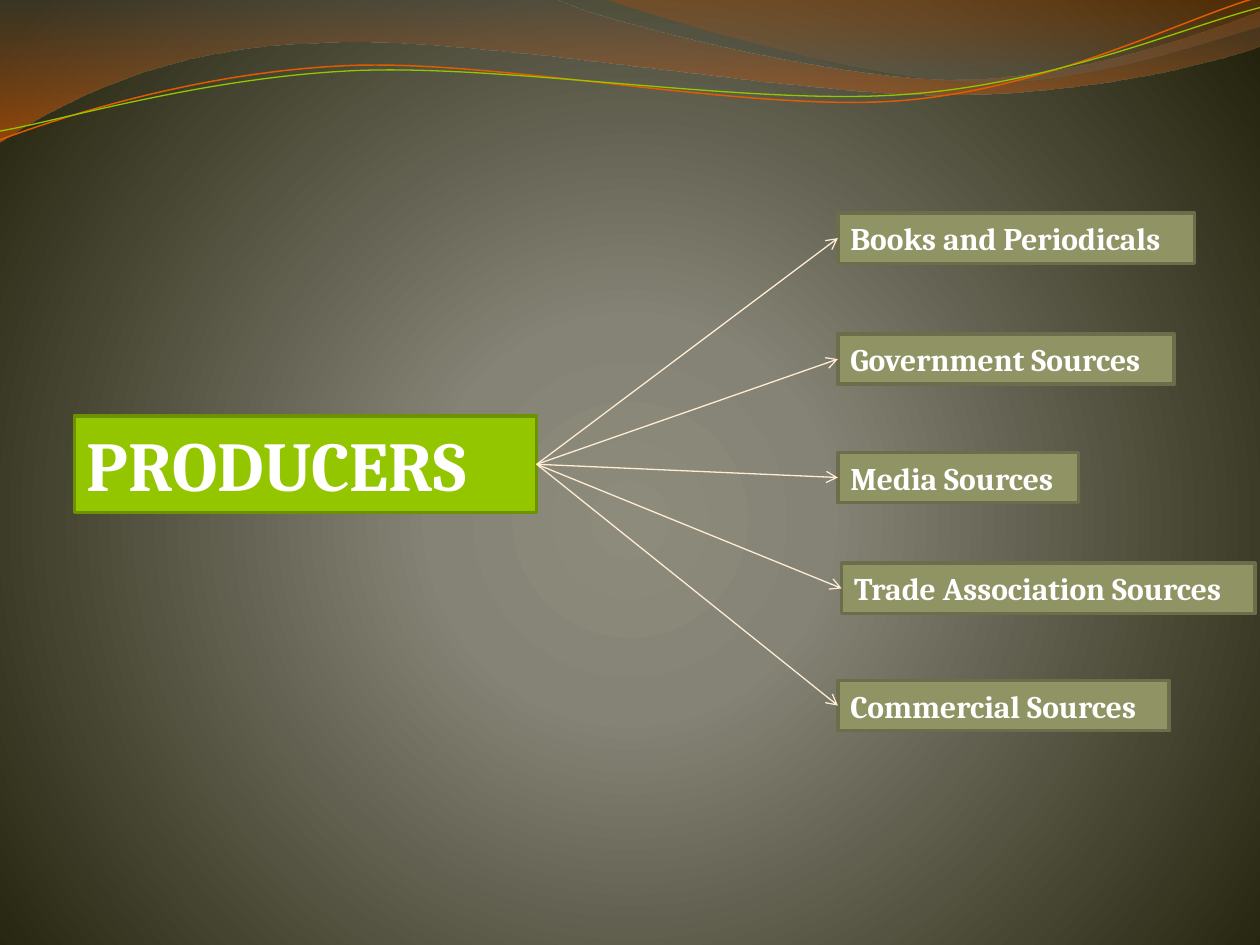
from math import cos, radians, sin

from lxml import etree
from pptx import Presentation
from pptx.dml.color import RGBColor
from pptx.enum.shapes import MSO_CONNECTOR, MSO_SHAPE
from pptx.enum.text import MSO_ANCHOR, MSO_AUTO_SIZE, PP_ALIGN
from pptx.oxml.ns import qn
from pptx.util import Inches, Pt

RECTANGLE = MSO_SHAPE.RECTANGLE
STRAIGHT = MSO_CONNECTOR.STRAIGHT
TOP = MSO_ANCHOR.TOP
LEFT = PP_ALIGN.LEFT
FIT_SHAPE = MSO_AUTO_SIZE.SHAPE_TO_FIT_TEXT
LEFT_SITE, RIGHT_SITE = 1, 3
STRAND_TILT = 2.7


def color(value):
    return RGBColor.from_string(value)


def set_gradient(element, stops, center=None):
    """Fill the gradient in element with (percent, colour, opacity) stops, downward or round a center."""
    gradient = next(element.iter(qn("a:gradFill")))
    for child in list(gradient):
        gradient.remove(child)
    stop_list = etree.SubElement(gradient, qn("a:gsLst"))
    for position, value, opacity in stops:
        stop = etree.SubElement(stop_list, qn("a:gs"), pos=str(position * 1000))
        stop_color = etree.SubElement(stop, qn("a:srgbClr"), val=value)
        if opacity < 100:
            etree.SubElement(stop_color, qn("a:alpha"), val=str(opacity * 1000))
    if center:
        circle = etree.SubElement(gradient, qn("a:path"), path="circle")
        edges = {side: str(percent * 1000) for side, percent in center.items()}
        etree.SubElement(circle, qn("a:fillToRect"), **edges)
    else:
        etree.SubElement(gradient, qn("a:lin"), ang="5400000", scaled="1")


prs = Presentation()
prs.slide_width, prs.slide_height = Inches(10), Inches(7.5)
slide = prs.slides.add_slide(prs.slide_layouts[6])
shapes = slide.shapes

slide.background.fill.gradient()
set_gradient(
    slide.background._cSld,
    [(0, "8D8C7C", 100), (25, "848375", 100), (100, "23220C", 100)],
    center={"l": 10, "t": 110, "r": 10, "b": 100},
)

# Each wave is a list of segments: two numbers make a line, six make a Bezier curve.
wide_wave = [
    (0, 0), (4.4, -0.01),
    (4.76, 0.17, 6.64, 0.63, 7.58, 0.63), (8.53, 0.63, 9.58, 0.26, 10, 0.09),
    (10.01, 0.36),
    (9.83, 0.44, 8.7, 0.76, 7.46, 0.75), (6.22, 0.75, 3.82, 0.28, 2.57, 0.34),
    (1.29, 0.36, 0.46, 0.83, -0.01, 1.13), (0, 0),
]
right_wave = [
    (4.79, -0.01),
    (5.09, 0.11, 6.82, 0.62, 7.69, 0.65), (8.56, 0.69, 9.61, 0.32, 10, 0.21),
    (10, 0), (4.79, -0.01),
]
orange_strand = [
    (0, 1.11),
    (0.48, 0.93, 1.58, 0.57, 2.77, 0.52), (3.95, 0.47, 5.93, 0.89, 7.13, 0.8),
    (8.33, 0.71, 9.38, 0.15, 9.98, -0.02),
]
green_strand = [
    (0, 1.04),
    (0.47, 0.96, 1.64, 0.61, 2.83, 0.56), (4.03, 0.51, 5.97, 0.84, 7.17, 0.75),
    (8.36, 0.67, 9.41, 0.21, 10, 0.06),
]
waves = [
    (wide_wave, 0, [(0, "554D41", 45), (100, "E75D00", 55)], None, 0),
    (right_wave, 0, [(0, "BD4C00", 30), (80, "685D4B", 45)], None, 0),
    (orange_strand, STRAND_TILT, None, "E15B00", 0.85),
    (green_strand, STRAND_TILT, None, "94C600", 0.75),
]
center_x, center_y = 4.99, 0.58
for segments, tilt, stops, line_color, line_width in waves:
    # The points are turned back by the tilt, which the shape's rotation then restores.
    cosine, sine = cos(radians(tilt)), sin(radians(tilt))
    points = []
    for segment in segments:
        for x, y in zip(segment[::2], segment[1::2]):
            dx, dy = x - center_x, y - center_y
            points.append((Inches(center_x + dx * cosine - dy * sine),
                           Inches(center_y + dx * sine + dy * cosine)))
    builder = shapes.build_freeform(*points[0])
    builder.add_line_segments(points[1:], close=stops is not None)
    wave = builder.convert_to_shape()
    wave.rotation = -tilt % 360
    wave.shadow.inherit = False

    # Merge every three line steps that belong to a curve into one Bezier step.
    steps = iter(list(wave._element.iter(qn("a:lnTo"))))
    for segment in segments[1:]:
        first = next(steps)
        if len(segment) == 6:
            first.addprevious(curve := etree.Element(qn("a:cubicBezTo")))
            for step in (first, next(steps), next(steps)):
                curve.append(step[0])
                step.getparent().remove(step)

    if stops:
        wave.fill.gradient()
        set_gradient(wave._element.spPr, stops)
        wave.line.fill.background()
    else:
        wave.fill.background()
        wave.line.color.rgb = color(line_color)
        wave.line.width = Pt(line_width)

labels = [
    ("PRODUCERS", 0.59, 3.3, 3.67, 0.77, 40, "94C600", "6D9200"),
    ("Books and Periodicals", 6.65, 1.69, 2.83, 0.4, 18, "909465", "6B6D4B"),
    ("Government Sources", 6.65, 2.65, 2.67, 0.4, 18, "909465", "6B6D4B"),
    ("Media Sources", 6.65, 3.59, 1.91, 0.4, 18, "909465", "6B6D4B"),
    ("Trade Association Sources", 6.68, 4.47, 3.28, 0.4, 18, "909465", "6B6D4B"),
    ("Commercial Sources", 6.65, 5.4, 2.63, 0.4, 18, "909465", "6B6D4B"),
]
boxes = []
for text, left, top, width, height, size, fill_color, border_color in labels:
    box = shapes.add_shape(RECTANGLE, Inches(left), Inches(top), Inches(width), Inches(height))
    box.shadow.inherit = False
    box.fill.solid()
    box.fill.fore_color.rgb = color(fill_color)
    box.line.color.rgb = color(border_color)
    box.line.width = Pt(2)
    frame = box.text_frame
    frame.text = text
    frame.word_wrap = False
    frame.auto_size = FIT_SHAPE
    frame.vertical_anchor = TOP
    paragraph = frame.paragraphs[0]
    paragraph.alignment = LEFT
    font = paragraph.runs[0].font
    font.name, font.size, font.bold = "Cambria", Pt(size), True
    font.color.rgb = color("FFFFFF")
    boxes.append(box)

producers, *sources = boxes
for source in sources:
    arrow = shapes.add_connector(STRAIGHT, 0, 0, 0, 0)
    arrow.begin_connect(producers, RIGHT_SITE)
    arrow.end_connect(source, LEFT_SITE)
    arrow.line.color.rgb = color("FFECD3")
    arrow.line.width = Pt(0.75)
    etree.SubElement(arrow.line._get_or_add_ln(), qn("a:tailEnd"), type="arrow")
    etree.SubElement(arrow._element.spPr, qn("a:effectLst"))

prs.save("out.pptx")
